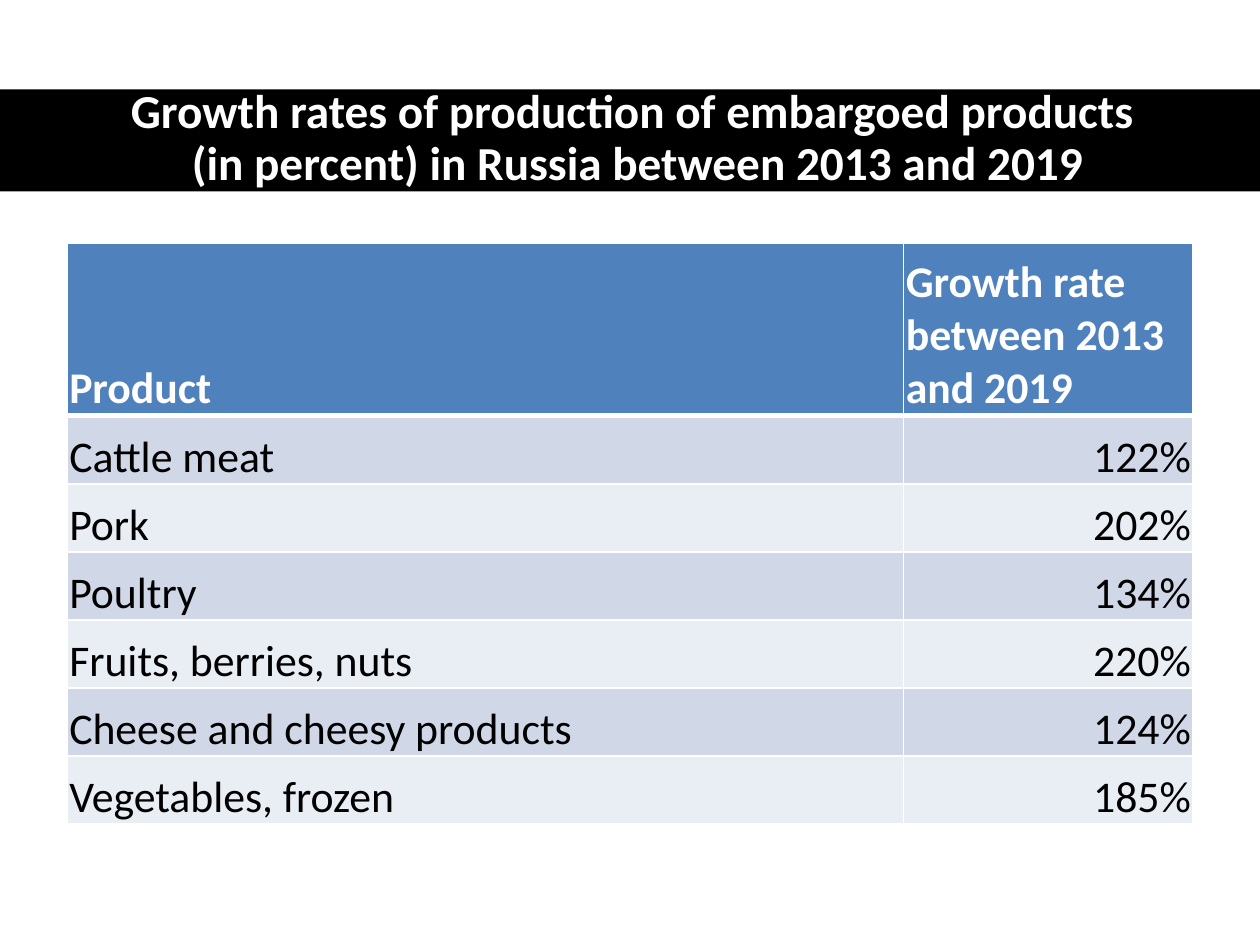
from dataclasses import dataclass

from lxml.etree import SubElement
from pptx import Presentation
from pptx.dml.color import RGBColor
from pptx.enum.shapes import MSO_SHAPE as Shape
from pptx.enum.text import MSO_ANCHOR as Anchor, MSO_AUTO_SIZE as AutoSize, PP_ALIGN as Align
from pptx.oxml.ns import qn
from pptx.util import Inches, Pt


@dataclass(frozen=True)
class Theme:
    font: str = "Calibri"
    title_size: float = 27
    table_size: float = 25
    white: str = "FFFFFF"
    black: str = "000000"
    header: str = "4F81BD"
    bands: tuple[str, str] = ("D0D8E8", "E9EDF4")


@dataclass(frozen=True)
class Box:
    left: float
    top: float
    width: float
    height: float

    def emu(self) -> tuple:
        return tuple(map(Inches, (self.left, self.top, self.width, self.height)))


@dataclass(frozen=True)
class Growth:
    product: str
    percent: int


THEME = Theme()
SLIDE_W, SLIDE_H = 10, 7.5
BAND_BOX = Box(0, 0.71, SLIDE_W, 0.81)
TITLE_BOX = Box(0.46, 0.7, 0.92 * SLIDE_W, 0.81)
COLUMNS = (6.64, 2.3)
HEADER_H, ROW_H = 1.37, 0.54

TITLE = ("Growth rates of production of embargoed products \v"
         "(in percent) in Russia between 2013 and 2019")
HEADINGS = ("Product", "Growth rate between 2013 and 2019")
GROWTH = (
    Growth("Cattle meat", 122),
    Growth("Pork", 202),
    Growth("Poultry", 134),
    Growth("Fruits, berries, nuts", 220),
    Growth("Cheese and cheesy products", 124),
    Growth("Vegetables, frozen", 185),
)


def write(frame, text: str, *, size: float, color: str, bold: bool = False,
          align=Align.LEFT, spacing: float = 1.0) -> None:
    frame.text = text
    for paragraph in frame.paragraphs:
        paragraph.alignment = align
        paragraph.line_spacing = spacing
        for run in paragraph.runs:
            run.font.name = THEME.font
            run.font.size = Pt(size)
            run.font.bold = bold
            run.font.color.rgb = RGBColor.from_string(color)


def draw_borders(cell, bottom: float) -> None:
    """Add white cell borders; call before the fill, which must follow them."""
    properties = cell._tc.get_or_add_tcPr()
    for side, width in (("L", 1), ("R", 1), ("T", 1), ("B", bottom)):
        line = SubElement(properties, qn(f"a:ln{side}"), w=str(Pt(width)))
        SubElement(SubElement(line, qn("a:solidFill")), qn("a:srgbClr"), val=THEME.white)


def fill_cell(cell, text: str, *, fill: str, bottom: float = 1, **text_format) -> None:
    draw_borders(cell, bottom)
    cell.fill.solid()
    cell.fill.fore_color.rgb = RGBColor.from_string(fill)
    cell.margin_left = cell.margin_right = cell.margin_top = Inches(0.02)
    cell.margin_bottom = 0
    cell.vertical_anchor = Anchor.BOTTOM
    write(cell.text_frame, text, size=THEME.table_size, **text_format)


def draw_title(slide) -> None:
    # Black band, placed behind the title
    band = slide.shapes.add_shape(Shape.RECTANGLE, *BAND_BOX.emu())
    band.shadow.inherit = False
    band.fill.solid()
    band.fill.fore_color.rgb = RGBColor.from_string(THEME.black)
    band.line.fill.background()
    title = slide.shapes.title
    title._element.addprevious(band._element)

    title.left, title.top, title.width, title.height = TITLE_BOX.emu()
    frame = title.text_frame
    frame.word_wrap = True
    frame.auto_size = AutoSize.NONE
    frame.vertical_anchor = Anchor.MIDDLE
    write(frame, TITLE, size=THEME.title_size, color=THEME.white, bold=True,
          align=Align.CENTER, spacing=0.9)


def draw_table(slide) -> None:
    box = Box(0.53, 1.93, sum(COLUMNS), HEADER_H + ROW_H * len(GROWTH))
    table = slide.shapes.add_table(len(GROWTH) + 1, len(COLUMNS), *box.emu()).table
    for column, width in zip(table.columns, COLUMNS):
        column.width = Inches(width)
    for index, row in enumerate(table.rows):
        row.height = Inches(ROW_H if index else HEADER_H)

    # Header row
    for column, heading in enumerate(HEADINGS):
        fill_cell(table.cell(0, column), heading, fill=THEME.header, bottom=3,
                  color=THEME.white, bold=True)

    # Product rows in alternating colours
    for index, growth in enumerate(GROWTH):
        fill = THEME.bands[index % 2]
        product, rate = table.rows[index + 1].cells
        fill_cell(product, growth.product, fill=fill, color=THEME.black)
        fill_cell(rate, f"{growth.percent}%", fill=fill, color=THEME.black, align=Align.RIGHT)
        if index == 0:
            # The heavy rule under the header is shared with this row
            for cell in (product, rate):
                cell._tc.tcPr.find(qn("a:lnT")).set("w", str(Pt(3)))


def main() -> None:
    deck = Presentation()
    deck.slide_width, deck.slide_height = Inches(SLIDE_W), Inches(SLIDE_H)
    slide = deck.slides.add_slide(deck.slide_layouts.get_by_name("Title Only"))
    draw_title(slide)
    draw_table(slide)
    deck.save("out.pptx")


if __name__ == "__main__":
    main()
